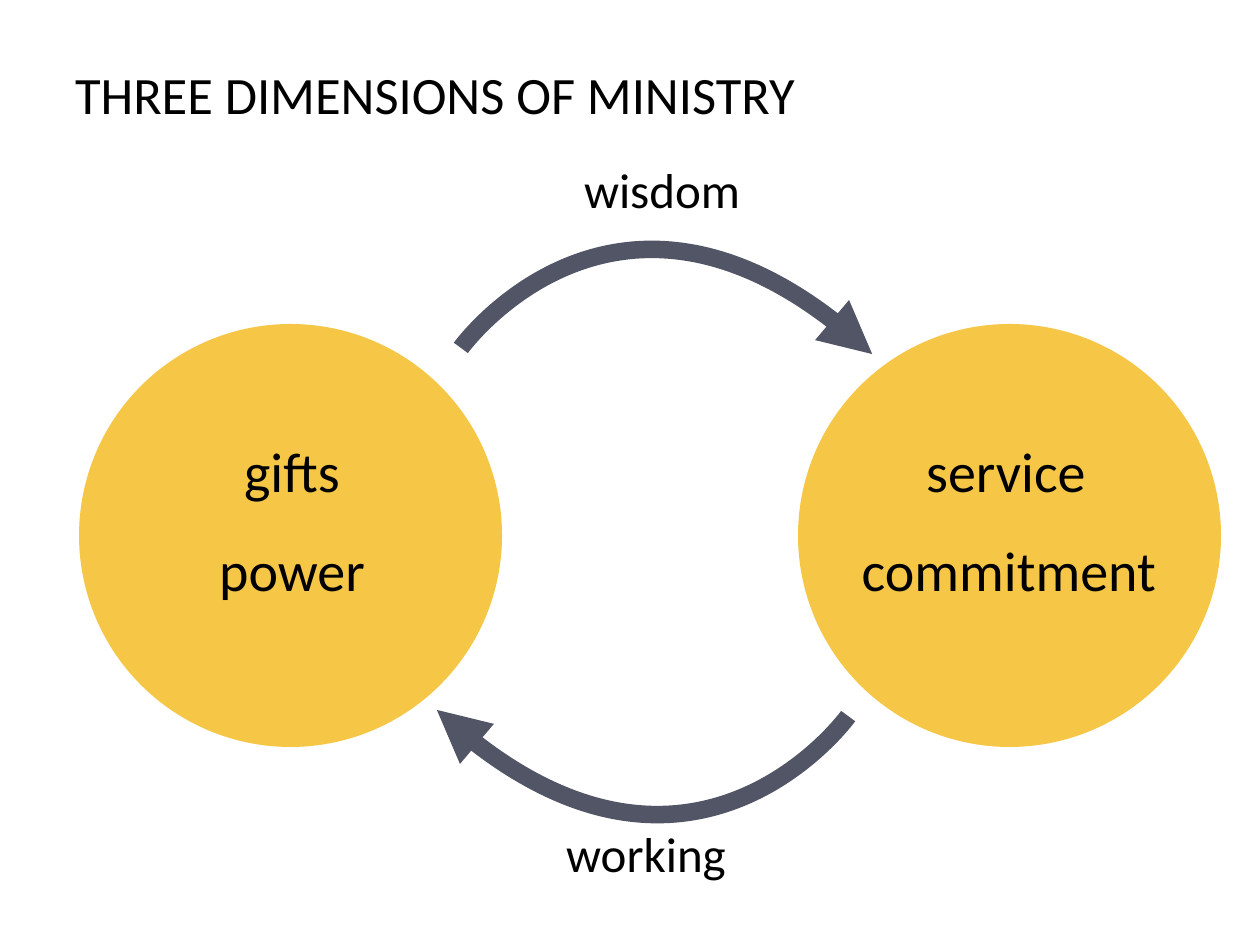
from lxml import etree
from pptx import Presentation, util as u
from pptx.dml.color import RGBColor
from pptx.enum import shapes, text
from pptx.oxml.ns import qn

PX = u.Inches(1) / 126
COLORS = {"circle": "F6C646", "arrow": "525565", "text": "000000"}


def px(*lengths):
    return [round(n * PX) for n in lengths]


def rgb(name):
    return RGBColor.from_string(COLORS[name])


def add_text(s, box, words, size, align=text.PP_ALIGN.CENTER,
             anchor=text.MSO_ANCHOR.TOP, fit=text.MSO_AUTO_SIZE.SHAPE_TO_FIT_TEXT):
    tf = s.shapes.add_textbox(*px(*box)).text_frame
    inset, = px(6)
    frame_format = {"word_wrap": True, "auto_size": fit, "vertical_anchor": anchor}
    frame_format.update({f"margin_{side}": inset
                         for side in ("left", "top", "right", "bottom")})
    for name, value in frame_format.items():
        setattr(tf, name, value)
    p = tf.paragraphs[0]
    p.text = words
    p.alignment = align
    font = p.runs[0].font
    for name, value in {"name": "Calibri", "size": u.Pt(size)}.items():
        setattr(font, name, value)
    font.color.rgb = rgb("text")


def add_circle(s, box, labels):
    """Draw a circle; each label is its words, left offset and width."""
    x, y, _, _ = box
    sp = s.shapes.add_shape(shapes.MSO_SHAPE.OVAL, *px(*box))
    sp.shadow.inherit = False
    sp.fill.solid()
    sp.fill.fore_color.rgb = rgb("circle")
    sp.line.fill.background()
    for row, (words, dx, width) in enumerate(labels):
        add_text(s, (x + dx, y + 107 + 98 * row, width, 83), words, 32)


def add_curved_arrow(s, box, rotation):
    """Draw a Bézier arrow from the box's bottom left to its top right, then turn it."""
    x, y, w, h = box
    builder = s.shapes.build_freeform(0, h, scale=PX)
    builder.add_line_segments([(w, 0)], close=False)
    sp = builder.convert_to_shape(*px(x, y))
    line_to = next(sp.element.iter(qn("a:lnTo")))
    line_to.tag = qn("a:cubicBezTo")
    for cx, cy in ((-35, 0), (0, h)):
        point = etree.Element(qn("a:pt"), x=str(cx), y=str(cy))
        line_to.insert(0, point)
    sp.rotation = rotation
    sp.shadow.inherit = False
    sp.fill.background()
    sp.line.color.rgb = rgb("arrow")
    sp.line.width = u.Pt(10)
    etree.SubElement(sp.line._get_or_add_ln(), qn("a:tailEnd"), type="triangle")


def add_cycle(s, box):
    x, y, w, h = box
    size = 423
    circle_y = y + 170
    add_circle(s, (x + w - size, circle_y, size, size),
               [("service", 90, 236), ("commitment", 35, 352)])
    add_circle(s, (x, circle_y, size, size),
               [("gifts", 95, 236), ("power", 95, 236)])
    add_curved_arrow(s, (x + 435, y + 59, 305, 276), 43)
    add_curved_arrow(s, (x + 411, y + 421, 305, 276), 223)
    add_text(s, (x + 465, y, 236, 74), "wisdom", 28)
    add_text(s, (x + 449, y + h - 74, 236, 74), "working", 28)


def main():
    prs = Presentation()
    prs.slide_width, prs.slide_height = px(1260, 945)
    s = prs.slides.add_slide(prs.slide_layouts[6])
    add_text(s, (69, 19, 927, 150), "THREE DIMENSIONS OF MINISTRY", 30,
             text.PP_ALIGN.LEFT, text.MSO_ANCHOR.MIDDLE, text.MSO_AUTO_SIZE.NONE)
    add_cycle(s, (79, 154, 1142, 738))
    prs.save("out.pptx")


if __name__ == "__main__":
    main()
